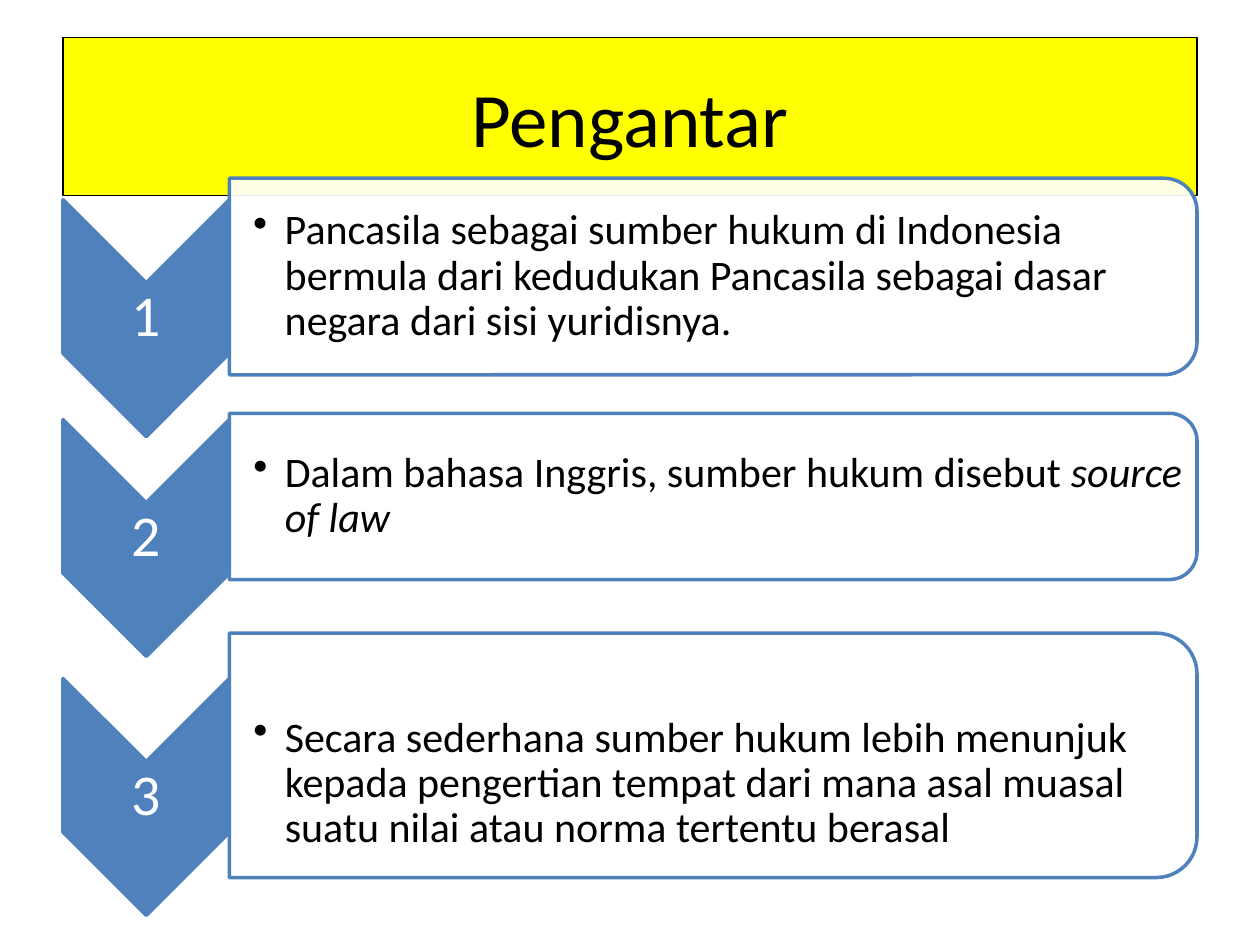
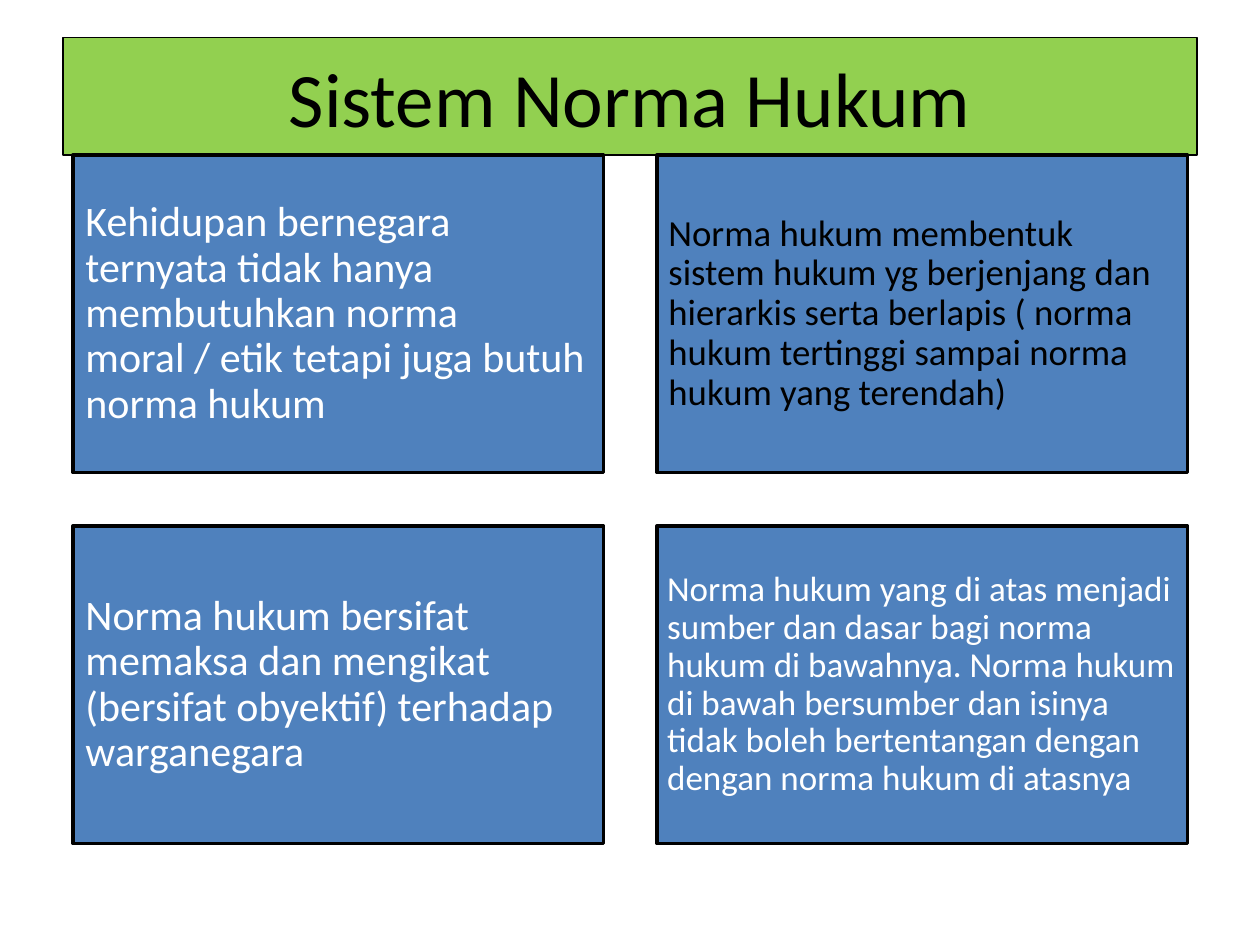
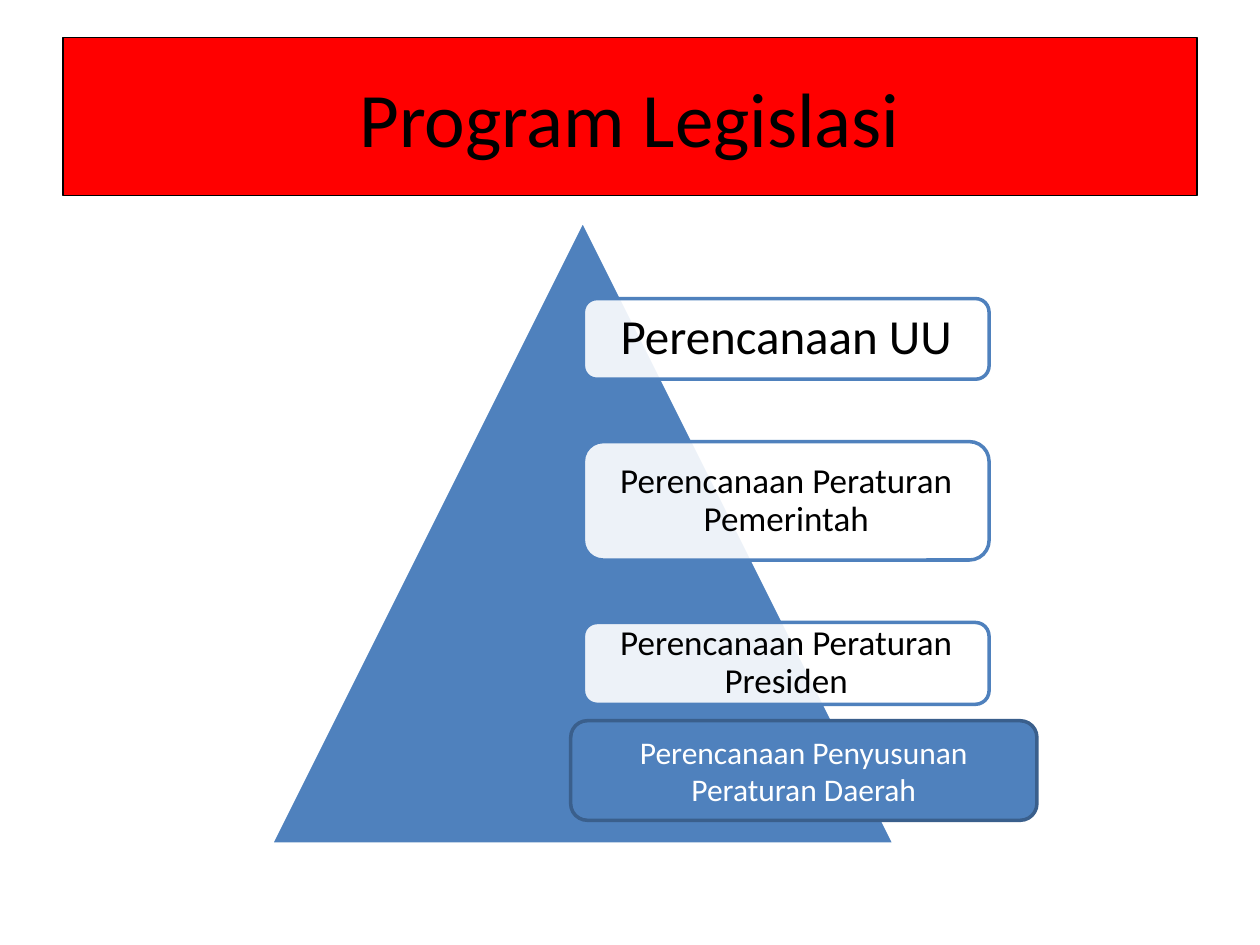
import dataclasses

import lxml.etree
import pptx
import pptx.dml.color
import pptx.enum.shapes
import pptx.enum.text
import pptx.oxml.ns
import pptx.util

SHAPE = pptx.enum.shapes.MSO_SHAPE
ALIGN = pptx.enum.text.PP_ALIGN
qn = pptx.oxml.ns.qn


@dataclasses.dataclass(frozen=True)
class Theme:
    font: str = "Calibri"
    ink: str = "000000"
    paper: str = "FFFFFF"
    blue: str = "4F81BD"
    dark_blue: str = "3A5F8C"
    yellow: str = "FFFF00"
    green: str = "92D050"
    red: str = "FF0000"
    title_size: int = 44
    number_size: int = 33
    body_size: int = 24
    thin: float = 0.75
    line: float = 2
    spacing: float = 0.9
    corner: float = 0.1667
    panel_opacity: int = 90


THEME = Theme()

# Every slide is a grid of 100 columns by 75 rows.
SLIDE_WIDTH, SLIDE_HEIGHT = pptx.util.Inches(10), pptx.util.Inches(7.5)
COLUMN, ROW = SLIDE_WIDTH / 100, SLIDE_HEIGHT / 75


def place(left, top, width, height):
    return [round(left * COLUMN), round(top * ROW),
            round(width * COLUMN), round(height * ROW)]


def rgb(code):
    return pptx.dml.color.RGBColor.from_string(code)


# Elements

def add_block(slide, kind, box, fill, line, weight=THEME.line, opacity=100):
    block = slide.shapes.add_shape(kind, *place(*box))
    block.shadow.inherit = False
    block.fill.solid()
    block.fill.fore_color.rgb = rgb(fill)
    if opacity < 100:
        color = block.fill._xPr.find(f".//{qn('a:srgbClr')}")
        lxml.etree.SubElement(color, qn("a:alpha"), val=str(opacity * 1000))
    block.line.color.rgb = rgb(line)
    block.line.width = pptx.util.Pt(weight)
    return block


def add_turned(slide, kind, center, width, height, **look):
    """Place a shape turned by 90 degrees; width and height are as seen."""
    x, y = center
    box = (x - height / 2, y - width / 2, height, width)
    add_block(slide, kind, box, **look).rotation = 90


def write(holder, runs, size, color=THEME.ink, align=ALIGN.CENTER,
          spacing=THEME.spacing, insets=(1, 0.5, 1, 0.5), bullet=False):
    frame = holder.text_frame
    frame.word_wrap = True
    frame.vertical_anchor = pptx.enum.text.MSO_ANCHOR.MIDDLE
    left, top, right, bottom = place(*insets)
    frame.margin_left, frame.margin_right = left, right
    frame.margin_top, frame.margin_bottom = top, bottom
    paragraph = frame.paragraphs[0]
    paragraph.alignment = align
    paragraph.line_spacing = spacing
    if bullet:
        hang = round(2.5 * COLUMN)
        properties = paragraph._p.get_or_add_pPr()
        properties.set("marL", str(hang))
        properties.set("indent", str(-hang))
        lxml.etree.SubElement(properties, qn("a:buChar"), char="•")
    for words, italic in runs:
        run = paragraph.add_run()
        run.text = words
        run.font.name = THEME.font
        run.font.size = pptx.util.Pt(size)
        run.font.color.rgb = rgb(color)
        run.font.italic = italic


def add_title(slide, title, fill, rows=12.5):
    band = add_block(slide, SHAPE.RECTANGLE, (5, 3, 90, rows),
                     fill, THEME.ink, THEME.thin)
    write(band, [(title, False)], THEME.title_size, spacing=1)


def add_step(slide, number, runs, middle, rows, top_inset=0.2):
    """A numbered chevron with a panel whose right corners are round."""
    left, chevron_width, chevron_height, panel_width = 5, 13.2, 18.8, 76.8
    chevron_middle = middle + chevron_width / 4
    panel_left = left + chevron_width
    add_turned(slide, SHAPE.CHEVRON,
               (left + chevron_width / 2, chevron_middle),
               chevron_width, chevron_height,
               fill=THEME.blue, line=THEME.blue)
    label = slide.shapes.add_textbox(
        *place(left, chevron_middle - 2.85, chevron_width, 5.7))
    write(label, [(str(number), False)], THEME.number_size, THEME.paper,
          insets=(0.2,) * 4)
    add_turned(slide, SHAPE.ROUND_2_SAME_RECTANGLE,
               (panel_left + panel_width / 2, middle), panel_width, rows,
               fill=THEME.paper, line=THEME.blue,
               opacity=THEME.panel_opacity)
    # The text stays clear of the round corners.
    clear = 0.29 * THEME.corner * rows
    statement = slide.shapes.add_textbox(
        *place(panel_left, middle - rows / 2 + clear,
               panel_width - clear, rows - 2 * clear))
    write(statement, runs, THEME.body_size, align=ALIGN.LEFT,
          insets=(1.9, top_inset, 0.2, 0.2), bullet=True)


# Slides

def build_introduction(slide):
    add_title(slide, "Pengantar", THEME.yellow)
    add_step(slide, 1, [(
        "Pancasila sebagai sumber hukum di Indonesia bermula dari kedudukan "
        "Pancasila sebagai dasar negara dari sisi yuridisnya.", False)],
        middle=21.95, rows=15.6)
    add_step(slide, 2, [
        ("Dalam bahasa Inggris, sumber hukum disebut ", False),
        ("source of law", True)], middle=39.4, rows=13.2)
    add_step(slide, 3, [(
        "Secara sederhana sumber hukum lebih menunjuk kepada pengertian "
        "tempat dari mana asal muasal suatu nilai atau norma tertentu "
        "berasal", False)], middle=59.95, rows=19.4, top_inset=4.7)


def build_norm_system(slide):
    add_title(slide, "Sistem Norma Hukum", THEME.green, rows=9.3)
    norms = [
        ("Kehidupan bernegara ternyata tidak hanya membutuhkan norma moral / "
         "etik tetapi juga butuh norma hukum", 24, THEME.paper, 1),
        ("Norma hukum membentuk sistem hukum yg berjenjang dan hierarkis "
         "serta berlapis ( norma hukum tertinggi sampai norma hukum yang "
         "terendah)", 21, THEME.ink, 0.9),
        ("Norma hukum bersifat memaksa dan mengikat (bersifat obyektif) "
         "terhadap warganegara", 24, THEME.paper, 1),
        ("Norma hukum yang di atas menjadi sumber dan dasar bagi norma hukum "
         "di bawahnya. Norma hukum di bawah bersumber dan isinya tidak boleh "
         "bertentangan dengan dengan norma hukum di atasnya",
         20, THEME.paper, 0.8),
    ]
    width, height, gap = 42.1, 25.2, 4.25
    for index, (norm, size, color, inset) in enumerate(norms):
        row, column = divmod(index, 2)
        box = (5.8 + column * (width + gap), 12.3 + row * (height + gap),
               width, height)
        card = add_block(slide, SHAPE.RECTANGLE, box, THEME.blue, THEME.ink)
        write(card, [(norm, False)], size, color, ALIGN.LEFT,
              insets=(inset,) * 4)


def build_legislation(slide):
    add_title(slide, "Program Legislasi", THEME.red)
    add_block(slide, SHAPE.ISOSCELES_TRIANGLE, (21.5, 17.5, 49.5, 49.5),
              THEME.blue, THEME.paper)
    plans = [("Perencanaan UU", 28, 6.4, 1.2),
             ("Perencanaan Peraturan Pemerintah", 20, 9.4, 0.8),
             ("Perencanaan Peraturan Presiden", 20, 6.5, 0.8)]
    top, gap = 23.7, 4.95
    for plan, size, rows, inset in plans:
        plate = add_block(slide, SHAPE.ROUNDED_RECTANGLE,
                          (46.3, top, 32.2, rows), THEME.paper, THEME.blue,
                          opacity=THEME.panel_opacity)
        write(plate, [(plan, False)], size, insets=(inset,) * 4)
        top += rows + gap
    regional = add_block(slide, SHAPE.ROUNDED_RECTANGLE,
                         (45.3, 57.2, 37, 7.9), THEME.blue, THEME.dark_blue)
    write(regional, [("Perencanaan Penyusunan Peraturan Daerah", False)],
          18, THEME.paper, spacing=1)


def main():
    deck = pptx.Presentation()
    deck.slide_width, deck.slide_height = SLIDE_WIDTH, SLIDE_HEIGHT
    blank = deck.slide_layouts[6]
    for build in (build_introduction, build_norm_system, build_legislation):
        build(deck.slides.add_slide(blank))
    deck.save("out.pptx")


if __name__ == "__main__":
    main()
